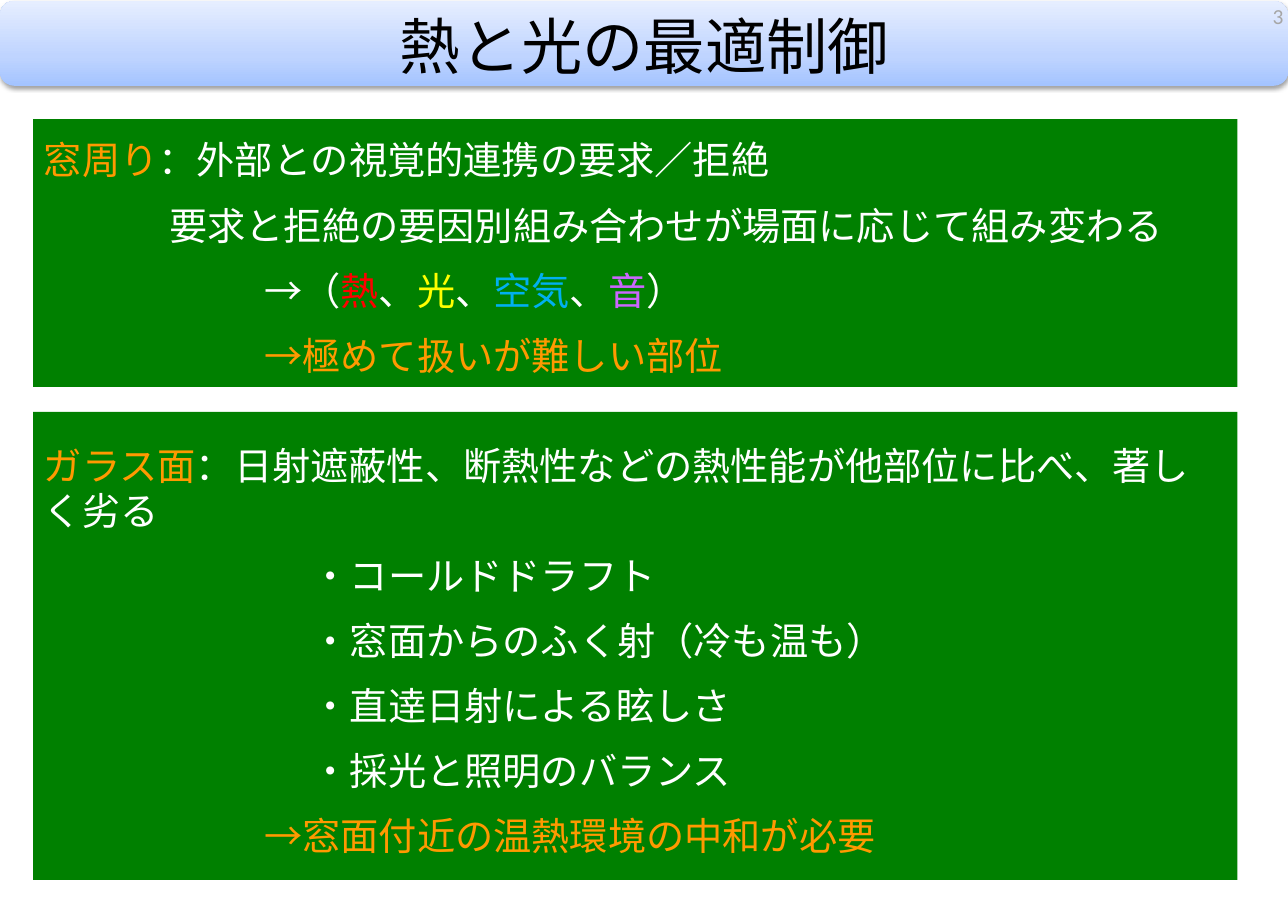
from dataclasses import dataclass

from lxml.etree import SubElement
from pptx import Presentation
from pptx.dml.color import RGBColor
from pptx.enum.shapes import MSO_SHAPE as Preset
from pptx.enum.text import MSO_ANCHOR as Anchor, PP_ALIGN as Align
from pptx.oxml import parse_xml
from pptx.oxml.ns import nsdecls, qn
from pptx.shapes.autoshape import Shape
from pptx.slide import Slide
from pptx.text.text import _Paragraph as Paragraph
from pptx.util import Pt


@dataclass(frozen=True)
class Theme:
    japanese: str = "Noto Sans CJK JP"
    latin: str = "Calibri"
    title_size: float = 40
    body_size: float = 25
    number_size: float = 14
    line_height: float = 30
    gap: float = 12.5
    black: str = "000000"
    white: str = "FFFFFF"
    grey: str = "A6A6A6"
    green: str = "008000"
    orange: str = "FF9900"
    red: str = "FF0000"
    yellow: str = "FFFF00"
    blue: str = "00B0F0"
    violet: str = "CC66FF"
    header: tuple[tuple[int, str], ...] = ((0, "A4C4FF"), (35, "BFD4FF"), (100, "E6EEFF"))


THEME = Theme()
WIDTH, HEIGHT = 841.68, 595.44


@dataclass(frozen=True)
class Span:
    text: str
    color: str = THEME.white


@dataclass(frozen=True)
class Line:
    spans: tuple[Span, ...]
    indent: float = 0


@dataclass(frozen=True)
class Panel:
    top: float
    height: float
    lines: tuple[Line, ...]


CONCLUSION_INDENT, BULLET_INDENT = 144, 175
DRAWBACKS = ("コールドドラフト", "窓面からのふく射（冷も温も）", "直逹日射による眩しさ", "採光と照明のバランス")
PANELS = (
    Panel(77.9, 175, (
        Line((Span("窓周り", THEME.orange), Span("：外部との視覚的連携の要求／拒絶"))),
        Line((Span("要求と拒絶の要因別組み合わせが場面に応じて組み変わる"),), 82),
        Line((Span("→（"), Span("熱", THEME.red), Span("、"), Span("光", THEME.yellow), Span("、"),
              Span("空気", THEME.blue), Span("、"), Span("音", THEME.violet), Span("）")),
             CONCLUSION_INDENT),
        Line((Span("→極めて扱いが難しい部位", THEME.orange),), CONCLUSION_INDENT),
    )),
    Panel(269.2, 306, (
        Line((Span("ガラス面", THEME.orange),
              Span("：日射遮蔽性、断熱性などの熱性能が他部位に比べ、著しく劣る"))),
        *(Line((Span(f"・{drawback}"),), BULLET_INDENT) for drawback in DRAWBACKS),
        Line((Span("→窓面付近の温熱環境の中和が必要", THEME.orange),), CONCLUSION_INDENT),
    )),
)


def set_font(para: Paragraph, name: str, size: float, color: str) -> None:
    """Format a whole paragraph, East Asian letters included."""
    para.font.name, para.font.size = name, Pt(size)
    para.font.color.rgb = RGBColor.from_string(color)
    SubElement(para._p.pPr.find(qn("a:defRPr")), qn("a:ea"), typeface=name)


def clear_margins(shape: Shape) -> None:
    """Remove the inner margins of a text shape."""
    frame = shape.text_frame
    frame.margin_left = frame.margin_right = frame.margin_top = frame.margin_bottom = 0


def draw_header(slide: Slide) -> None:
    """Draw the shaded bar and the title on it."""
    bar = slide.shapes.add_shape(Preset.ROUNDED_RECTANGLE, 0, Pt(0.7), Pt(WIDTH), Pt(55.4))
    bar.line.fill.background()
    bar.fill.gradient()
    bar.fill.gradient_angle = 90
    properties = bar._element.spPr
    stops = properties.find(qn("a:gradFill")).find(qn("a:gsLst"))
    stops.clear()
    for position, color in THEME.header:
        stop = SubElement(stops, qn("a:gs"), pos=str(position * 1000))
        SubElement(stop, qn("a:srgbClr"), val=color)
    properties.append(parse_xml(
        f'<a:effectLst {nsdecls("a")}><a:outerShdw blurRad="{Pt(3.1)}" dist="{Pt(1.6)}" '
        f'dir="5400000" rotWithShape="0"><a:srgbClr val="{THEME.black}"><a:alpha val="38000"/>'
        '</a:srgbClr></a:outerShdw></a:effectLst>'))

    title = slide.shapes.title
    title._element.addprevious(bar._element)
    title.left, title.top, title.width, title.height = 0, Pt(0.7), Pt(WIDTH), Pt(56.9)
    clear_margins(title)
    title.text_frame.text = "熱と光の最適制御"
    title.text_frame.vertical_anchor = Anchor.MIDDLE
    title.text_frame.word_wrap = False
    para = title.text_frame.paragraphs[0]
    para.alignment = Align.CENTER
    set_font(para, THEME.japanese, THEME.title_size, THEME.black)


def draw_panel(slide: Slide, panel: Panel) -> None:
    """Draw a green box with its lines of text."""
    box = slide.shapes.add_shape(Preset.RECTANGLE, Pt(21.6), Pt(panel.top), Pt(787), Pt(panel.height))
    box.shadow.inherit = False
    box.fill.solid()
    box.fill.fore_color.rgb = RGBColor.from_string(THEME.green)
    box.line.fill.background()
    frame = box.text_frame
    frame.word_wrap = True
    frame.vertical_anchor = Anchor.MIDDLE
    frame.margin_top = Pt(9)
    for index, line in enumerate(panel.lines):
        para = frame.add_paragraph() if index else frame.paragraphs[0]
        para.alignment = Align.LEFT
        para.line_spacing = Pt(THEME.line_height)
        para.space_before = Pt(THEME.gap if index else 0)
        para._p.get_or_add_pPr().set("marL", str(Pt(line.indent)))
        set_font(para, THEME.japanese, THEME.body_size, THEME.white)
        for span in line.spans:
            run = para.add_run()
            run.text = span.text
            run.font.color.rgb = RGBColor.from_string(span.color)


def draw_number(slide: Slide) -> None:
    """Write the slide number in the top right corner."""
    box = slide.shapes.add_textbox(Pt(814.3), Pt(2.2), Pt(24.5), Pt(17.3))
    clear_margins(box)
    box.text_frame.word_wrap = True
    box.text_frame.text = "3"
    para = box.text_frame.paragraphs[0]
    para.alignment = Align.RIGHT
    set_font(para, THEME.latin, THEME.number_size, THEME.grey)


def main() -> None:
    """Build the slide and save the deck."""
    deck = Presentation()
    deck.slide_width, deck.slide_height = Pt(WIDTH), Pt(HEIGHT)
    slide = deck.slides.add_slide(deck.slide_layouts[5])
    draw_header(slide)
    for panel in PANELS:
        draw_panel(slide, panel)
    draw_number(slide)
    deck.save("out.pptx")


if __name__ == "__main__":
    main()
